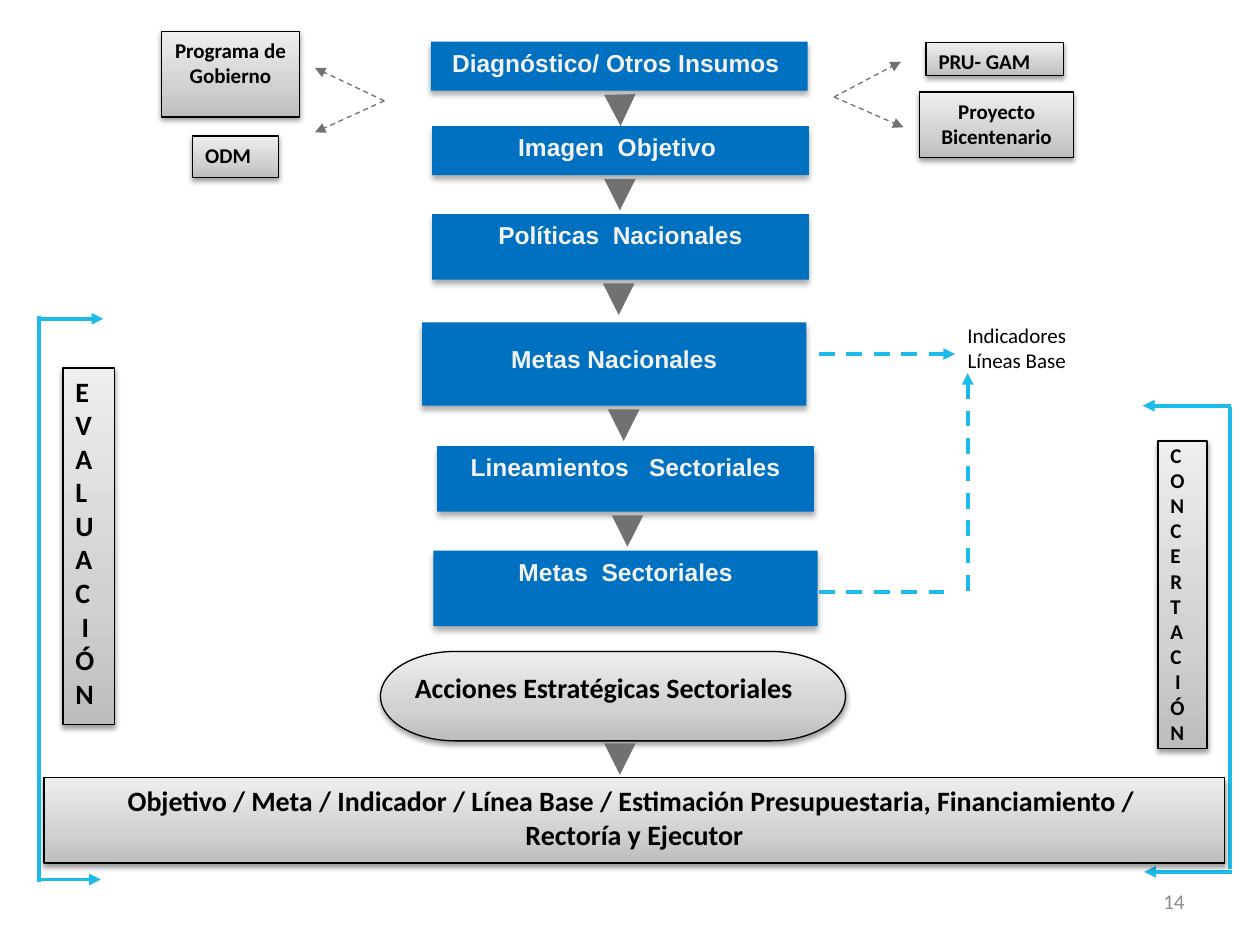
from copy import deepcopy

from lxml.etree import SubElement as Sub
from pptx import Presentation
from pptx.dml.color import RGBColor as RGB
from pptx.enum.dml import MSO_LINE
from pptx.enum.shapes import MSO_CONNECTOR, MSO_SHAPE
from pptx.enum.text import MSO_ANCHOR, PP_ALIGN
from pptx.oxml.ns import qn
from pptx.util import Inches, Pt

C = {"blue": "0070C0", "pale": "F2F2F2", "cyan": "1DBBEA", "gray": "707173",
     "black": "000000", "white": "FFFFFF", "page": "8C8C8C",
     "dark": "BDBDBD", "mid": "D1D1D1", "light": "EEEEEE"}
MID, LEFT, RIGHT = PP_ALIGN.CENTER, PP_ALIGN.LEFT, PP_ALIGN.RIGHT
RECT, PILL = MSO_SHAPE.RECTANGLE, MSO_SHAPE.FLOWCHART_TERMINATOR

prs = Presentation()
prs.slide_width, prs.slide_height = Inches(10), Inches(7.5)
slide = prs.slides.add_slide(prs.slide_layouts[6])
U = prs.slide_width / 100  # one column and one row of a 100 x 75 grid


def box(text, x, y, w, h, look="gray", size=12, align=MID, form=RECT, top=0.5):
    """Add a text shape; look is gray (gradient), blue or white."""
    shp = slide.shapes.add_shape(form, *(round(v * U) for v in (x, y, w, h)))
    shp.shadow.inherit = False
    shp.line.fill.background()
    if look == "gray":
        shp.fill.gradient()
        shp.fill.gradient_angle = 90
        stops = shp._element.spPr.find(".//" + qn("a:gsLst"))
        stops.insert(1, deepcopy(stops[0]))
        for stop, key, at in zip(shp.fill.gradient_stops,
                                 ("dark", "mid", "light"), (0, 0.35, 1)):
            stop.color.rgb = RGB.from_string(C[key])
            stop.position = at
        shp.line.color.rgb = RGB.from_string(C["black"])
        shp.line.width = Pt(0.75)
    else:
        shp.fill.solid()
        shp.fill.fore_color.rgb = RGB.from_string(C[look])
    if look != "white":
        blur, dist, alpha = (3.1, 1.6, 38) if look == "gray" else (3.5, 2.2, 32)
        fx = shp._element.spPr.find(qn("a:effectLst"))
        shade = Sub(fx, qn("a:outerShdw"), blurRad=str(Pt(blur)),
                    dist=str(Pt(dist)), dir="5400000", rotWithShape="0")
        tone = Sub(shade, qn("a:srgbClr"), val=C["black"])
        Sub(tone, qn("a:alpha"), val=str(alpha * 1000))
    frame = shp.text_frame
    frame.word_wrap = True
    frame.vertical_anchor = MSO_ANCHOR.TOP
    frame.margin_top = round(top * U)
    frame.text = text
    for par in frame.paragraphs:
        par.alignment = align
        par.font.name = "Arial" if look == "blue" else "Calibri"
        par.font.size = Pt(size)
        par.font.bold = look != "white"
        par.font.color.rgb = RGB.from_string(C["pale" if look == "blue" else "black"])
    return shp


def link(x1, y1, x2, y2, color="cyan", width=2.25, dash=False, tip=True):
    """Add a straight line, with an arrowhead at its end if tip."""
    con = slide.shapes.add_connector(
        MSO_CONNECTOR.STRAIGHT, *(round(v * U) for v in (x1, y1, x2, y2)))
    con.line.color.rgb = RGB.from_string(C[color])
    con.line.width = Pt(width)
    if dash:
        con.line.dash_style = MSO_LINE.DASH
    if tip:
        Sub(con.line._get_or_add_ln(), qn("a:tailEnd"), type="triangle")
    Sub(con._element.spPr, qn("a:effectLst"))
    return con


# Central chain: text, x, y, width, height, top inset, x of the arrow below
chain = [
    ("Diagnóstico/ Otros Insumos ", 34.2, 3.3, 29.9, 3.9, 0.5, 49.2),
    ("Imagen  Objetivo ", 34.3, 10, 29.9, 3.9, 0.5, 49.2),
    ("Políticas  Nacionales", 34.3, 17, 29.9, 5.2, 0.5, 49.1),
    ("Metas Nacionales", 33.5, 25.6, 30.5, 6.6, 1.7, 49.5),
    ("Lineamientos   Sectoriales", 34.7, 35.4, 29.9, 5.2, 0.5, 49.8),
    ("Metas  Sectoriales", 34.4, 43.7, 30.5, 6, 0.5, None),
]
steps, downs = [], []
for text, x, y, w, h, top, mid in chain:
    steps.append(box(text, x, y, w, h, "blue", 14, top=top))
    if mid:
        downs.append(link(mid, y + h + 0.5, mid, y + h + 2.8, "gray", 6))
downs[0].end_connect(steps[1], 0)

box("Acciones Estratégicas Sectoriales", 30.2, 51.7, 36.9, 7.1,
    size=16, align=LEFT, form=PILL)
link(49.2, 59.2, 49.2, 61.5, "gray", 6)

# Outer brackets
for ends in [(3.1, 25.1, 3.1, 70), (97.6, 69, 97.6, 32.3)]:
    link(*ends, tip=False)
for ends in [(3.2, 25.3, 8.2, 25.3), (3, 69.8, 8, 69.8),
             (97.8, 69.2, 90.8, 69.2), (97.7, 32.2, 90.7, 32.2)]:
    link(*ends)

# Indicators and their dashed path
box("Indicadores\nLíneas Base", 74.1, 25.1, 13.2, 5.2, "white")
link(65, 47, 75.8, 47, dash=True, tip=False)
link(76.8, 46.9, 76.8, 29.6, dash=True)
link(65, 28.1, 75.8, 28.1, dash=True)

# Inputs on both sides
box("Programa de Gobierno", 12.8, 2.5, 11, 6.8)
box("ODM", 15.3, 10.8, 6.8, 3.3, align=LEFT)
box("PRU- GAM", 73.5, 3.4, 10.9, 2.6, align=LEFT)
box("Proyecto Bicentenario", 73, 7.3, 12.2, 5.2)
for ends in [(30.5, 8, 25, 5.4), (30.5, 8, 25, 10.5),
             (66.2, 7.7, 71.7, 10.1), (66.2, 7.7, 71.5, 4.9)]:
    link(*ends, "gray", 0.75, dash=True)

# Base strip and upright labels
box("Objetivo / Meta / Indicador / Línea Base / Estimación Presupuestaria, "
    "Financiamiento / \nRectoría y Ejecutor", 3.5, 61.7, 93.7, 6.8, size=16)
box("\n".join(["E", "V", "A", "L", "U", "A", "C", " I", "Ó", "N"]),
    5, 29.2, 4.1, 28.3, size=16, align=LEFT)
box("\n".join(["C", "O", "N", "C", "E", "R", "T", "A", "C", " I", "Ó", "N"]),
    91.9, 35, 3.9, 24.4, align=LEFT, top=0.1)

# Page number
page = slide.shapes.add_textbox(*(round(v * U) for v in (71.7, 69.5, 23.3, 4)))
page.text_frame.word_wrap = True
page.text_frame.vertical_anchor = MSO_ANCHOR.MIDDLE
par = page.text_frame.paragraphs[0]
par.text = "14"
par.alignment = RIGHT
par.font.name, par.font.size = "Calibri", Pt(12)
par.font.color.rgb = RGB.from_string(C["page"])

prs.save("out.pptx")
